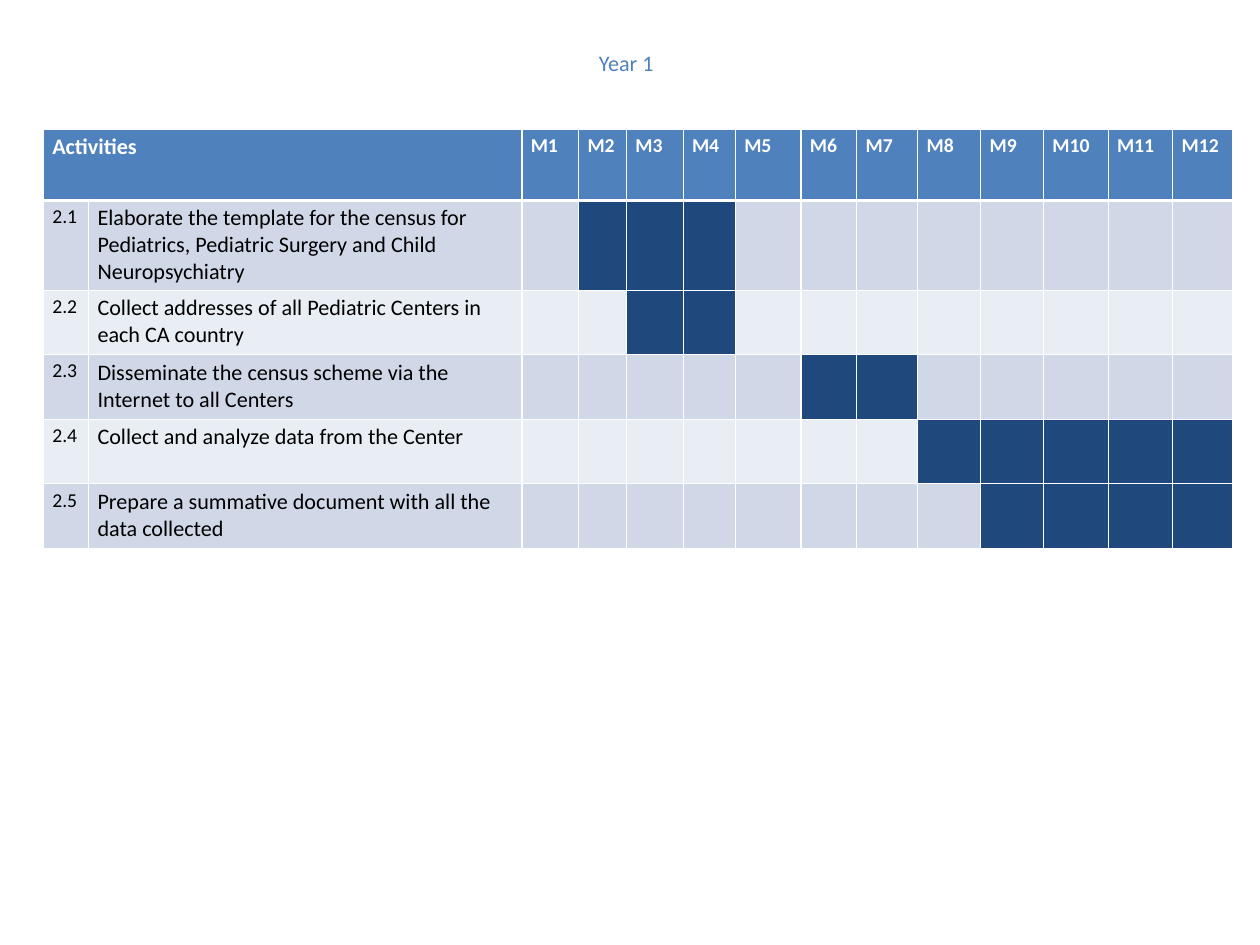
"""Build the Year 1 activity schedule as a monthly Gantt table."""
from lxml.etree import SubElement
from pptx import Presentation
from pptx.dml.color import RGBColor
from pptx.oxml.ns import qn
from pptx.util import Inches, Pt

WHITE = RGBColor(0xFF, 0xFF, 0xFF)
BLACK = RGBColor(0x00, 0x00, 0x00)
HEADER_BLUE = RGBColor(0x4F, 0x81, 0xBD)
ACTIVE_BLUE = RGBColor(0x1F, 0x49, 0x7D)
BANDS = (RGBColor(0xD0, 0xD8, 0xE8), RGBColor(0xE9, 0xED, 0xF4))

SLIDE_WIDTH, SLIDE_HEIGHT = Inches(14.22), Inches(10.67)
LABEL_SHARES = [3.59, 34.39]
MONTH_SHARES = [4.5, 3.8, 4.5, 4.15, 5.2, 4.43, 4.85, 4.99, 4.99, 5.13, 5.13, 4.71]
ROW_SHARES = [7.5, 8.43] + [6.84] * 4

ACTIVITIES = [
    ("Elaborate the template for the census for Pediatrics, "
     "Pediatric Surgery and Child Neuropsychiatry", 2, 4),
    ("Collect addresses of all Pediatric Centers in each CA country", 3, 4),
    ("Disseminate the census scheme via the Internet to all Centers", 6, 7),
    ("Collect and analyze data from the Center", 8, 12),
    ("Prepare a summative document with all the data collected", 9, 12),
]


def across(percent):
    """Return a share of the slide width."""
    return round(SLIDE_WIDTH * percent / 100)


def down(percent):
    """Return a share of the slide height."""
    return round(SLIDE_HEIGHT * percent / 100)


def write(frame, text, size=18, color=BLACK, bold=False):
    """Put one formatted span into a text frame."""
    span = frame.paragraphs[0].add_run()
    span.text = text
    span.font.name = "Calibri"
    span.font.size = Pt(size)
    span.font.bold = bold
    span.font.color.rgb = color


def style_cell(cell, fill, top=1, bottom=1):
    """Give a cell white borders and a solid fill."""
    properties = cell._tc.get_or_add_tcPr()
    for side, width in (("L", 1), ("R", 1), ("T", top), ("B", bottom)):
        line = SubElement(properties, qn(f"a:ln{side}"), w=str(Pt(width)))
        paint = SubElement(line, qn("a:solidFill"))
        SubElement(paint, qn("a:srgbClr"), val=str(WHITE))
    cell.fill.solid()
    cell.fill.fore_color.rgb = fill


def add_title(page, text):
    """Add the year above the table."""
    box = page.shapes.add_textbox(across(46.84), down(4.78), across(51.34), down(3.75))
    box.text_frame.word_wrap = True
    write(box.text_frame, text, color=HEADER_BLUE)


def fill_header(table):
    """Fill the heading row with the label and the months."""
    for cell in table.rows[0].cells:
        style_cell(cell, HEADER_BLUE, bottom=3)
    table.cell(0, 0).merge(table.cell(0, 1))
    write(table.cell(0, 0).text_frame, "Activities", color=WHITE, bold=True)
    for month in range(1, len(MONTH_SHARES) + 1):
        write(table.cell(0, month + 1).text_frame, f"M{month}",
              size=16, color=WHITE, bold=True)


def fill_activity(table, row, name, start, end):
    """Fill one activity row and colour its active months."""
    for column, cell in enumerate(table.rows[row].cells):
        active = start <= column - 1 <= end
        style_cell(cell, ACTIVE_BLUE if active else BANDS[(row - 1) % 2],
                   top=3 if row == 1 else 1)
    write(table.cell(row, 0).text_frame, f"2.{row}", size=16)
    write(table.cell(row, 1).text_frame, name)


def add_schedule(page):
    """Add the schedule table."""
    widths = LABEL_SHARES + MONTH_SHARES
    table = page.shapes.add_table(
        len(ROW_SHARES), len(widths), across(3.45), down(13.68),
        across(sum(widths)), down(sum(ROW_SHARES))).table
    for column, share in zip(table.columns, widths):
        column.width = across(share)
    for row, share in zip(table.rows, ROW_SHARES):
        row.height = down(share)
    fill_header(table)
    for row, activity in enumerate(ACTIVITIES, start=1):
        fill_activity(table, row, *activity)


def main():
    """Create and save the deck."""
    deck = Presentation()
    deck.slide_width, deck.slide_height = SLIDE_WIDTH, SLIDE_HEIGHT
    page = deck.slides.add_slide(deck.slide_layouts[6])
    add_schedule(page)
    add_title(page, "Year 1")
    deck.save("out.pptx")


if __name__ == "__main__":
    main()
